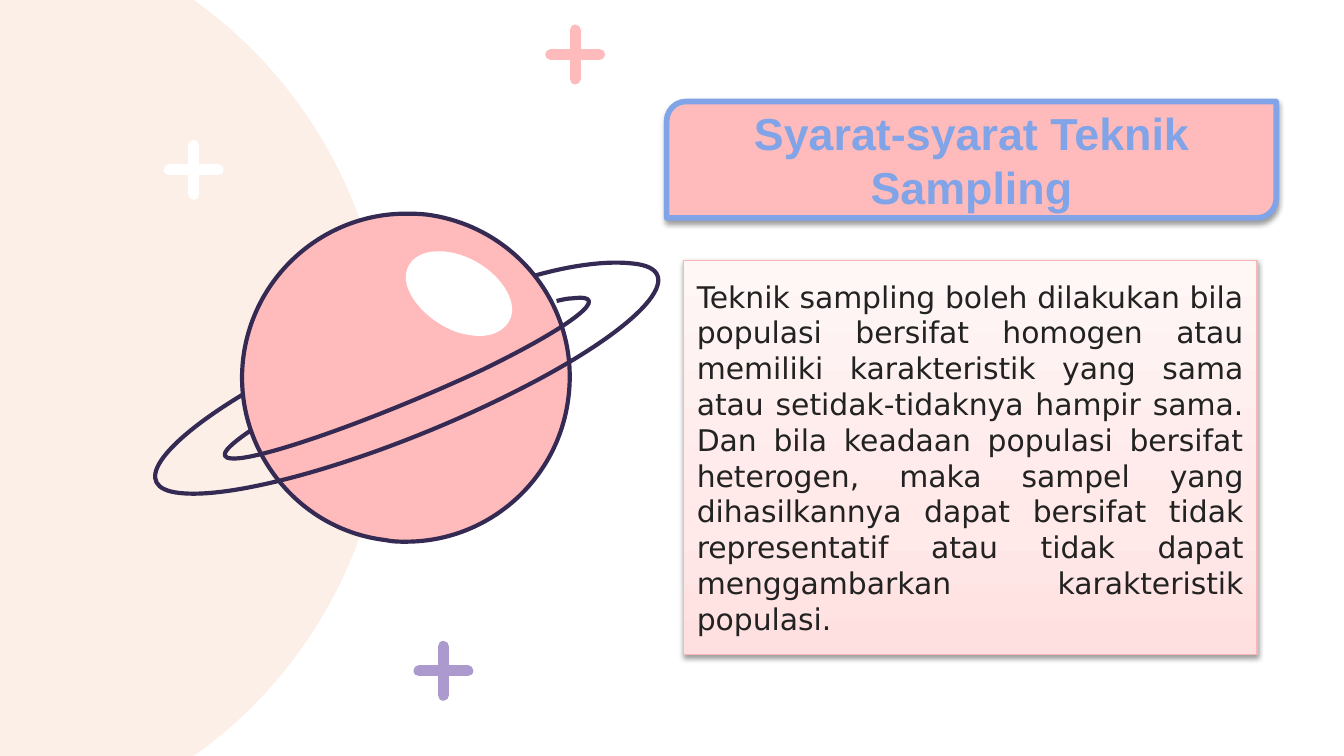
from lxml import etree
from pptx import Presentation
from pptx.dml.color import RGBColor
from pptx.enum import shapes, text
from pptx.oxml import parse_xml
from pptx.oxml.ns import nsdecls, qn
from pptx.util import Cm, Pt

PINK = RGBColor(0xFF, 0xBB, 0xBB)
CREAM = RGBColor(0xFC, 0xEF, 0xE7)
WHITE = RGBColor(0xFF, 0xFF, 0xFF)
LILAC = RGBColor(0xAC, 0x99, 0xCE)
NAVY = RGBColor(0x35, 0x2A, 0x53)
BLUE = RGBColor(0x80, 0xA4, 0xE7)
ROSE = RGBColor(0xFB, 0xB5, 0xB5)
INK = RGBColor(0x22, 0x22, 0x22)
BLUSH = [(0, RGBColor(0xFF, 0xE0, 0xE0)), (35, RGBColor(0xFF, 0xE9, 0xE9)),
         (100, RGBColor(0xFF, 0xF6, 0xF6))]

deck = Presentation()
deck.slide_width, deck.slide_height = Cm(25.4), Cm(14.29)
slide = deck.slides.add_slide(deck.slide_layouts[6])
tree = slide.shapes


def draw(home, start, parts, fill=None, line=None):
    """Outline of lines (one point) and cubic curves (two handles, one end).

    Filled shapes are closed, the others stay open.
    """
    spots = [(Cm(x), Cm(y)) for part in parts for x, y in part]
    pen = home.build_freeform(Cm(start[0]), Cm(start[1]))
    pen.add_line_segments(spots, close=fill is not None)
    shape = pen.convert_to_shape()
    steps = iter(list(shape._element.iter(qn("a:lnTo"))))
    for part in parts:
        group = [next(steps) for _ in part]
        if len(group) == 3:
            curve = etree.Element(qn("a:cubicBezTo"))
            group[0].addprevious(curve)
            for step in group:
                curve.append(step[0])
                step.getparent().remove(step)
    shape.shadow.inherit = False
    if fill is None:
        shape.fill.background()
    else:
        shape.fill.solid()
        shape.fill.fore_color.rgb = fill
    if line is None:
        shape.line.fill.background()
    else:
        shape.line.color.rgb = line
        shape.line.width = Pt(2.25)


# Backdrop
draw(tree, (7.32, 7.14), [
    [(7.32, 4.19), (5.87, 1.57), (3.66, 0)],
    [(0, 0)], [(0, 14.29)], [(3.66, 14.29)],
    [(5.87, 12.73), (7.32, 10.11), (7.32, 7.14)]], fill=CREAM)

# Plus signs
arm = 0.46
for x, y, color in [(10.87, 1.03, PINK), (3.66, 3.21, WHITE), (8.38, 12.68, LILAC)]:
    plus = tree.add_group_shape()
    for dx, dy in [(0, arm), (arm, 0)]:
        bar = plus.shapes.add_connector(shapes.MSO_CONNECTOR.STRAIGHT,
                                        Cm(x - dx), Cm(y - dy), Cm(x + dx), Cm(y + dy))
        bar.line.color.rgb = color
        bar.line.width = Pt(6)
        bar.line._get_or_add_ln().set("cap", "rnd")
        etree.SubElement(bar._element.spPr, qn("a:effectLst"))

# Planet: globe, shine, inner and outer ring
planet = tree.add_group_shape().shapes
draw(planet, (7.67, 4.04), [
    [(6.15, 4.04), (4.8, 5.18), (4.6, 6.76)],
    [(4.39, 8.43), (5.59, 10.01), (7.29, 10.21)],
    [(7.42, 10.24), (7.54, 10.24), (7.67, 10.24)],
    [(9.22, 10.24), (10.54, 9.09), (10.74, 7.54)],
    [(10.97, 5.84), (9.78, 4.29), (8.08, 4.06)],
    [(7.92, 4.04), (7.8, 4.04), (7.67, 4.04)]], fill=PINK, line=NAVY)
draw(planet, (8.31, 4.75), [
    [(7.95, 4.75), (7.7, 4.9), (7.67, 5.21)],
    [(7.65, 5.59), (8.08, 6.07), (8.61, 6.27)],
    [(8.76, 6.32), (8.92, 6.35), (9.07, 6.35)],
    [(9.4, 6.35), (9.65, 6.17), (9.68, 5.89)],
    [(9.7, 5.51), (9.3, 5.03), (8.74, 4.83)],
    [(8.59, 4.78), (8.43, 4.75), (8.31, 4.75)]], fill=WHITE)
draw(planet, (10.52, 5.69), [
    [(10.64, 5.66), (10.74, 5.64), (10.82, 5.64)],
    [(11.61, 5.54), (10.85, 6.15), (9.12, 6.99)],
    [(7.39, 7.8), (5.33, 8.56), (4.55, 8.66)],
    [(4.06, 8.71), (4.19, 8.51), (4.75, 8.13)]], line=NAVY)
draw(planet, (10.11, 5.21), [
    [(10.85, 5), (11.51, 4.93), (11.94, 4.98)],
    [(13.11, 5.08), (12.17, 6.17), (9.8, 7.37)],
    [(7.47, 8.56), (4.6, 9.45), (3.4, 9.32)],
    [(2.44, 9.22), (3.02, 8.41), (4.57, 7.47)]], line=NAVY)

# Title and body cards
title = tree.add_shape(shapes.MSO_SHAPE.ROUND_2_DIAG_RECTANGLE,
                       Cm(12.6), Cm(1.92), Cm(11.52), Cm(2.2))
title.fill.solid()
title.fill.fore_color.rgb = PINK

body = tree.add_shape(shapes.MSO_SHAPE.FLOWCHART_PROCESS,
                      Cm(12.92), Cm(4.92), Cm(10.84), Cm(7.45))
body.fill.gradient()
body.fill.gradient_angle = 90
stops = body._element.spPr.find(qn("a:gradFill")).find(qn("a:gsLst"))
for stop in list(stops):
    stops.remove(stop)
for place, color in BLUSH:
    stop = etree.SubElement(stops, qn("a:gs"), pos=str(place * 1000))
    etree.SubElement(stop, qn("a:srgbClr"), val=str(color))

rules = ("Teknik sampling boleh dilakukan bila populasi bersifat homogen atau memiliki "
         "karakteristik yang sama atau setidak-tidaknya hampir sama. Dan bila keadaan "
         "populasi bersifat heterogen, maka sampel yang dihasilkannya dapat bersifat tidak "
         "representatif atau tidak dapat menggambarkan karakteristik populasi.")
cards = [
    (title, "Syarat-syarat Teknik Sampling", text.PP_ALIGN.CENTER, "Arial", 24, True, BLUE,
     BLUE, 3),
    (body, rules, text.PP_ALIGN.JUSTIFY, "DejaVu Sans", 16, False, INK, ROSE, 0.75),
]
for card, words, align, face, size, bold, color, edge, width in cards:
    card.line.color.rgb = edge
    card.line.width = Pt(width)
    card.shadow.inherit = False
    card._element.spPr.find(qn("a:effectLst")).append(parse_xml(
        f'<a:outerShdw {nsdecls("a")} blurRad="{Pt(3.1)}" dist="{Pt(1.6)}" dir="5400000" '
        'rotWithShape="0"><a:srgbClr val="000000"><a:alpha val="38000"/></a:srgbClr>'
        '</a:outerShdw>'))
    frame = card.text_frame
    frame.word_wrap = True
    frame.vertical_anchor = text.MSO_ANCHOR.MIDDLE
    para = frame.paragraphs[0]
    para.alignment = align
    run = para.add_run()
    run.text = words
    run.font.name = face
    run.font.size = Pt(size)
    run.font.bold = bold
    run.font.color.rgb = color

deck.save("out.pptx")
